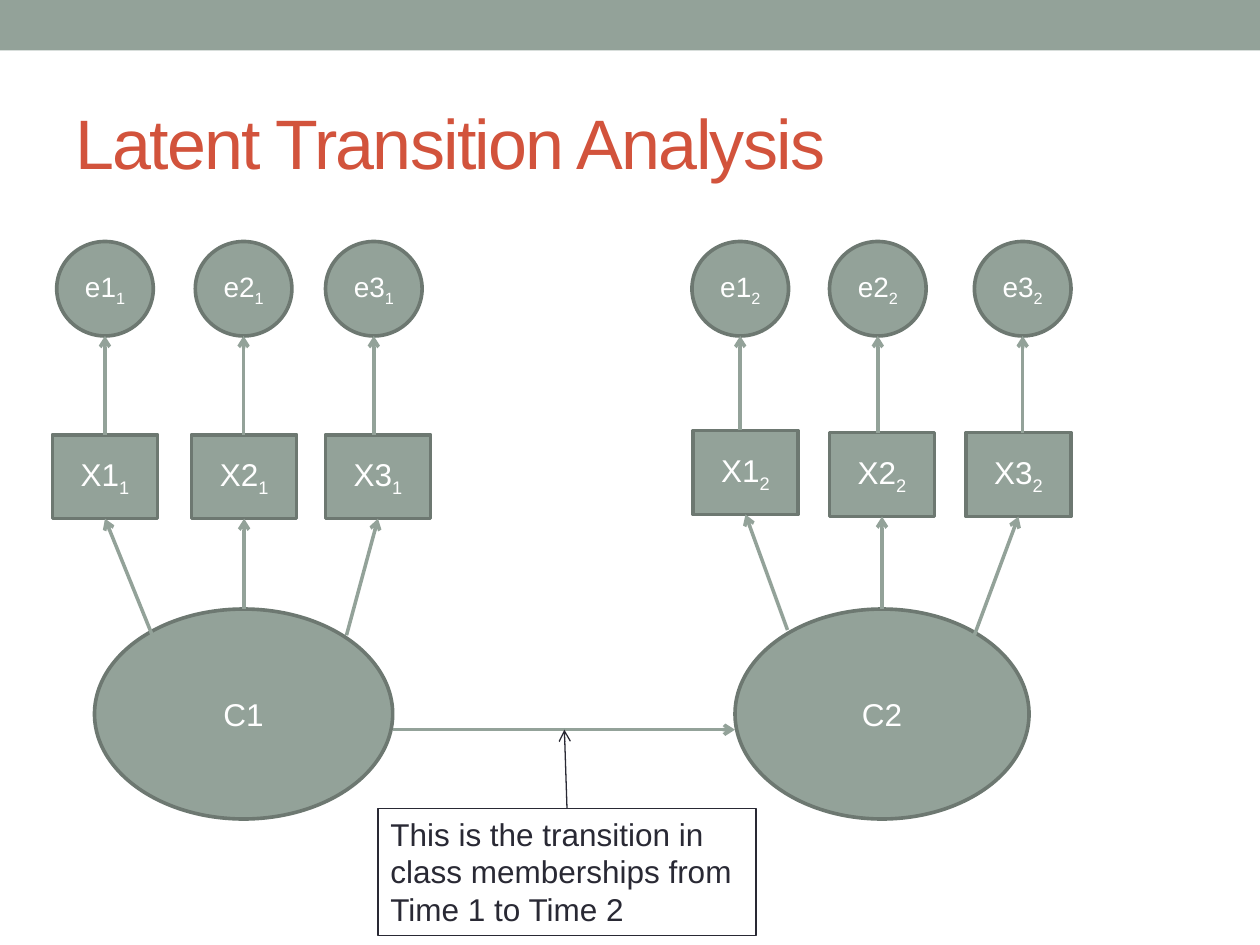
from dataclasses import dataclass

from lxml.etree import SubElement
from pptx import Presentation
from pptx.dml.color import RGBColor
from pptx.enum.shapes import MSO_CONNECTOR, MSO_SHAPE
from pptx.enum.text import MSO_ANCHOR, PP_ALIGN
from pptx.oxml.ns import qn
from pptx.util import Inches, Length, Pt

SAGE, SAGE_DARK = "93A299", "6D7871"
RUST, INK, WHITE = "D2533C", "292934", "FFFFFF"

# Grid of 120 columns by 90 rows, twelve to the inch
ERROR_TOP, ERROR_WIDTH, ERROR_HEIGHT = 23, 9.2, 9
INDICATOR_WIDTH, INDICATOR_HEIGHT = 10, 8
CLASS_TOP, CLASS_HEIGHT = 58, 20
TRANSITION_ROW = 69.5
CALLOUT_LEFT, CALLOUT_TOP, CALLOUT_WIDTH = 36, 77, 36


@dataclass(frozen=True)
class Indicator:
    error_left: float
    left: float
    top: float
    loading_start: tuple[float, float]


@dataclass(frozen=True)
class TimePoint:
    number: int
    class_left: float
    class_width: float
    indicators: tuple[Indicator, ...]


TIME_POINTS = (
    TimePoint(1, 9, 28.4, (
        Indicator(5.4, 5, 41.4, (14.5, 60.5)),
        Indicator(18.6, 18.25, 41.4, (23.25, 58)),
        Indicator(31, 31, 41.4, (33, 60.5)),
    )),
    TimePoint(2, 70, 28, (
        Indicator(65.9, 66, 41, (75, 60)),
        Indicator(79, 79, 41.2, (84, 58)),
        Indicator(92.8, 92, 41.2, (92.8, 60.5)),
    )),
)


def grid(units: float) -> Length:
    return Inches(units / 12)


def color(hex_code: str) -> RGBColor:
    return RGBColor.from_string(hex_code)


def add_block(kind, left: float, top: float, width: float, height: float,
              fill: str | None, line: str | None, line_width: float = 2.08):
    block = slide.shapes.add_shape(kind, *map(grid, (left, top, width, height)))
    block.shadow.inherit = False
    if fill:
        block.fill.solid()
        block.fill.fore_color.rgb = color(fill)
    else:
        block.fill.background()
    if line:
        block.line.color.rgb = color(line)
        block.line.width = Pt(line_width)
    else:
        block.line.fill.background()
    return block


def write(shape, text: str, size: float, text_color: str, subscript: str = "",
          align=PP_ALIGN.LEFT, anchor=MSO_ANCHOR.MIDDLE) -> None:
    frame = shape.text_frame
    frame.word_wrap = True
    frame.vertical_anchor = anchor
    paragraph = frame.paragraphs[0]
    paragraph.alignment = align
    paragraph.font.name = "Arial"
    paragraph.font.size = Pt(size)
    paragraph.font.color.rgb = color(text_color)
    paragraph.add_run().text = text
    if subscript:
        index = paragraph.add_run()
        index.text = subscript
        index._r.get_or_add_rPr().set("baseline", "-25000")


def add_node(kind, left: float, top: float, width: float, height: float,
             label: str, size: float, subscript: str = "") -> None:
    node = add_block(kind, left, top, width, height, SAGE, SAGE_DARK)
    write(node, label, size, WHITE, subscript, PP_ALIGN.CENTER)


def add_arrow(start: tuple[float, float], end: tuple[float, float],
              line: str = SAGE, width: float = 2) -> None:
    arrow = slide.shapes.add_connector(
        MSO_CONNECTOR.STRAIGHT, *map(grid, (*start, *end)))
    arrow.line.color.rgb = color(line)
    arrow.line.width = Pt(width)
    SubElement(arrow.line._get_or_add_ln(), qn("a:tailEnd"), type="arrow")
    SubElement(arrow._element.spPr, qn("a:effectLst"))


def draw_time_point(time: TimePoint) -> None:
    add_node(MSO_SHAPE.OVAL, time.class_left, CLASS_TOP, time.class_width,
             CLASS_HEIGHT, f"C{time.number}", 18)
    for item, indicator in enumerate(time.indicators, start=1):
        add_node(MSO_SHAPE.RECTANGLE, indicator.left, indicator.top,
                 INDICATOR_WIDTH, INDICATOR_HEIGHT, f"X{item}", 18, str(time.number))
        add_node(MSO_SHAPE.OVAL, indicator.error_left, ERROR_TOP,
                 ERROR_WIDTH, ERROR_HEIGHT, f"e{item}", 16, str(time.number))
        # Indicator to error, then class to indicator
        error_center = indicator.error_left + ERROR_WIDTH / 2
        add_arrow((error_center, indicator.top),
                  (error_center, ERROR_TOP + ERROR_HEIGHT))
        add_arrow(indicator.loading_start,
                  (indicator.left + INDICATOR_WIDTH / 2,
                   indicator.top + INDICATOR_HEIGHT))


presentation = Presentation()
presentation.slide_width, presentation.slide_height = grid(120), grid(90)
slide = presentation.slides.add_slide(presentation.slide_layouts[6])

# Top band and title
add_block(MSO_SHAPE.RECTANGLE, 0, 0, 120, 4.8, SAGE, None)
title = slide.shapes.add_textbox(*map(grid, (6, 7, 108, 13)))
write(title, "Latent Transition Analysis", 40, RUST)
title.text_frame.paragraphs[0].runs[0]._r.get_or_add_rPr().set("spc", "-100")

# Measurement model at each time
for time_point in TIME_POINTS:
    draw_time_point(time_point)

# Transition between the classes
first, second = TIME_POINTS
add_arrow((first.class_left + first.class_width, TRANSITION_ROW),
          (second.class_left, TRANSITION_ROW))

# Callout on the transition
callout = add_block(MSO_SHAPE.RECTANGLE, CALLOUT_LEFT, CALLOUT_TOP,
                    CALLOUT_WIDTH, 12.1, None, INK, 0.75)
write(callout, "This is the transition in class memberships from Time 1 to Time 2",
      18, INK, anchor=MSO_ANCHOR.TOP)
add_arrow((CALLOUT_LEFT + CALLOUT_WIDTH / 2, CALLOUT_TOP),
          (53.75, TRANSITION_ROW), INK, 0.75)

presentation.save("out.pptx")
